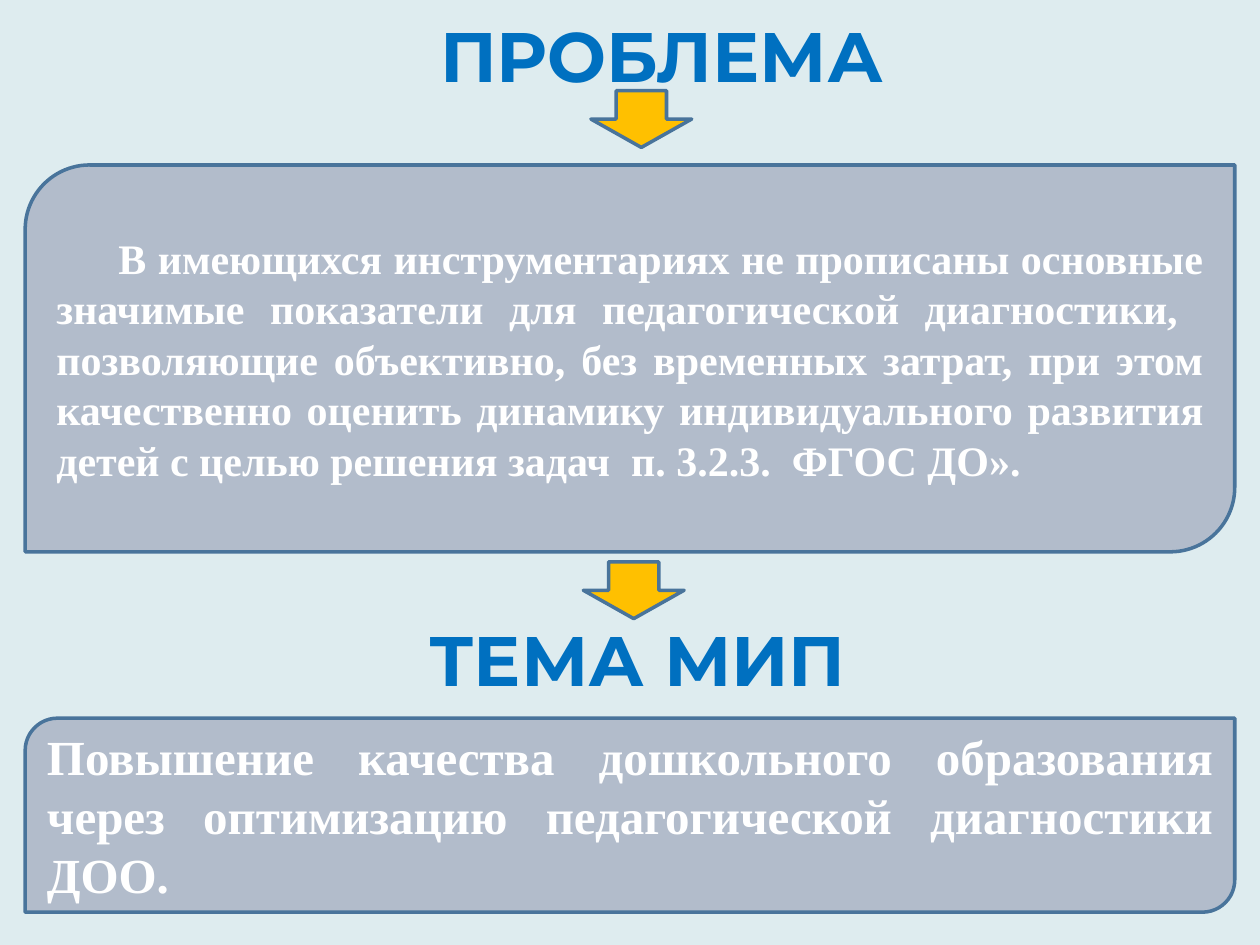
from pptx import Presentation
from pptx.dml.color import RGBColor
from pptx.enum.shapes import MSO_SHAPE
from pptx.enum.text import MSO_ANCHOR, PP_ALIGN
from pptx.util import Pt

PANEL = MSO_SHAPE.ROUND_2_DIAG_RECTANGLE
ARROW = MSO_SHAPE.DOWN_ARROW
MIDDLE = MSO_ANCHOR.MIDDLE
CENTER, JUSTIFY = PP_ALIGN.CENTER, PP_ALIGN.JUSTIFY

THEME = {
    "background": "DEECEF",
    "panel": "B2BCCB",
    "arrow": "FFC000",
    "outline": "49749B",
    "heading": "0070C0",
    "body": "FFFFFF",
    "heading_font": "Montserrat",
    "body_font": "Times New Roman",
    "heading_size": 40,
    "outline_width": 2,
}

SLIDE_WIDTH, SLIDE_HEIGHT = 720, 540
PANEL_MARGIN = 14.4
HEADING_SIZE = (648, 67.68)
ARROW_SIZE = (57.6, 32.4)

# text, left, top
HEADINGS = [
    ("ПРОБЛЕМА", 54, -2.88),
    ("ТЕМА МИП", 40.32, 342.72),
]
# text, top, height, type size, first-line indent
PANELS = [
    ("В имеющихся инструментариях не прописаны основные значимые показатели "
     "для педагогической диагностики,  позволяющие объективно, без временных "
     "затрат, при этом качественно оценить динамику индивидуального развития "
     "детей с целью решения задач  п. 3.2.3.  ФГОС ДО».", 94.32, 221.04, 24, 35.4),
    ("Повышение качества дошкольного образования через оптимизацию "
     "педагогической диагностики ДОО.", 410.4, 110.88, 28, 0),
]
# left, top
ARROWS = [(337.68, 51.84), (333.36, 321.12)]


def color(name):
    return RGBColor.from_string(THEME[name])


def write(box, text, role, size, align, indent=0):
    frame = box.text_frame
    frame.word_wrap = True
    frame.vertical_anchor = MIDDLE
    frame.text = text
    para = frame.paragraphs[0]
    para.alignment = align
    if indent:
        para._p.get_or_add_pPr().set("indent", str(Pt(indent)))
    font = para.runs[0].font
    font.name = THEME[role + "_font"]
    font.size = Pt(size)
    font.bold = True
    font.color.rgb = color(role)


def add_outlined(page, kind, left, top, width, height, fill):
    shape = page.shapes.add_shape(kind, Pt(left), Pt(top), Pt(width), Pt(height))
    shape.shadow.inherit = False
    shape.fill.solid()
    shape.fill.fore_color.rgb = color(fill)
    shape.line.color.rgb = color("outline")
    shape.line.width = Pt(THEME["outline_width"])
    return shape


def main():
    deck = Presentation()
    deck.slide_width, deck.slide_height = Pt(SLIDE_WIDTH), Pt(SLIDE_HEIGHT)
    page = deck.slides.add_slide(deck.slide_layouts[6])
    page.background.fill.solid()
    page.background.fill.fore_color.rgb = color("background")

    for text, top, height, size, indent in PANELS:
        panel = add_outlined(page, PANEL, PANEL_MARGIN, top,
                             SLIDE_WIDTH - 2 * PANEL_MARGIN, height, "panel")
        write(panel, text, "body", size, JUSTIFY, indent)

    for text, left, top in HEADINGS:
        box = page.shapes.add_textbox(Pt(left), Pt(top), *map(Pt, HEADING_SIZE))
        write(box, text, "heading", THEME["heading_size"], CENTER)

    for left, top in ARROWS:
        add_outlined(page, ARROW, left, top, *ARROW_SIZE, "arrow")

    deck.save("out.pptx")


if __name__ == "__main__":
    main()
